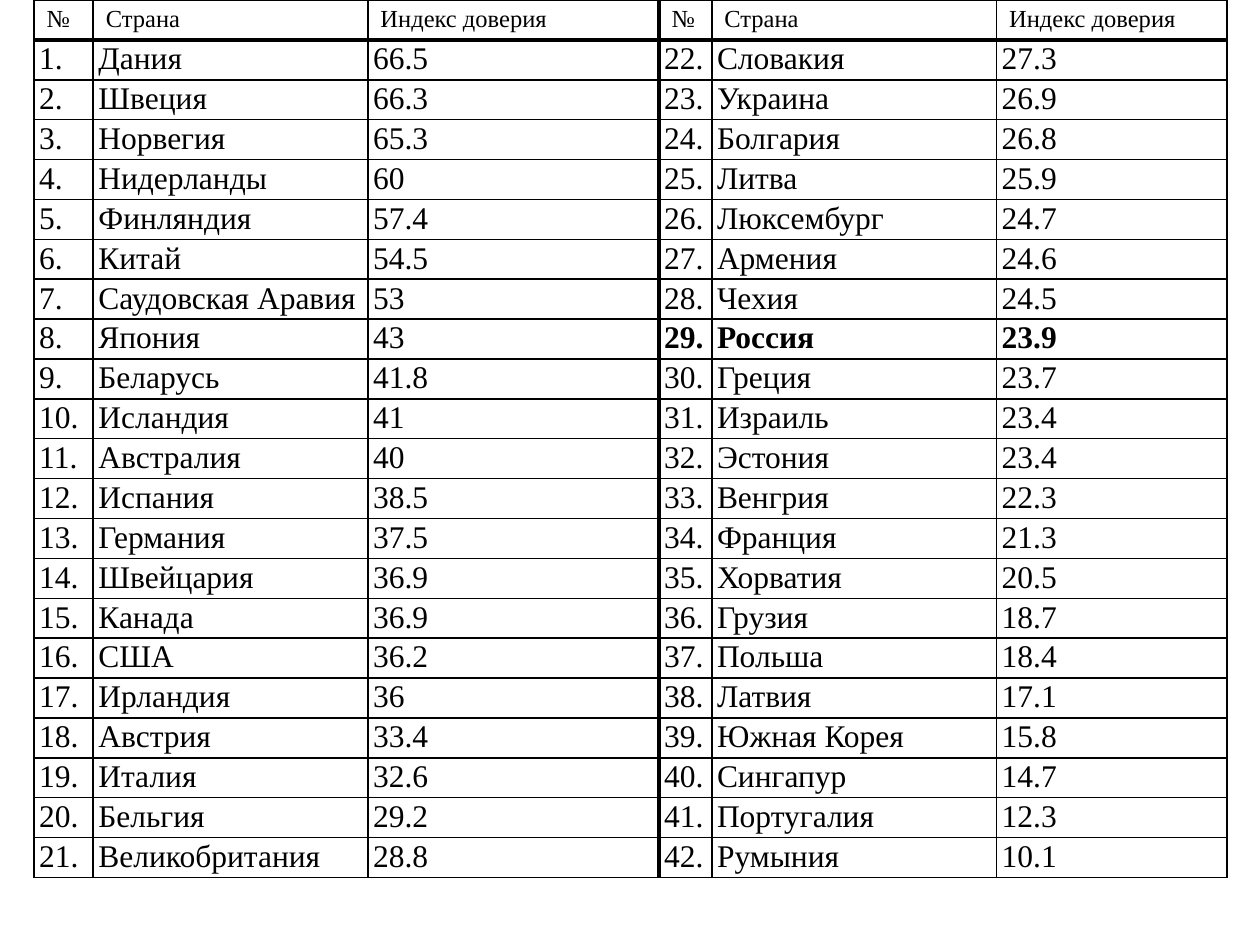
from typing import NamedTuple

from lxml.etree import SubElement
from pptx import Presentation
from pptx.dml.color import RGBColor
from pptx.oxml.ns import qn
from pptx.util import Pt

COLORS = {"ink": "000000"}
FONT = "Times New Roman"
HEADS = ("№", "Страна", "Индекс доверия")
WIDTHS = (33.84, 156.96, 166.32, 30.24, 162.72, 131.76)
ROW = 22.8
LEFT = 19.44
THIN, THICK = 1, 3
BOLD = "Россия"


class Entry(NamedTuple):
    land: str
    trust: str


class Style(NamedTuple):
    size: float
    side: float
    edge: float


HEAD = Style(14, 7.2, 3.2)
BODY = Style(18, 3, 1)

# Countries in order of rank
ENTRIES = [
    Entry("Дания", "66.5"),
    Entry("Швеция", "66.3"),
    Entry("Норвегия", "65.3"),
    Entry("Нидерланды", "60"),
    Entry("Финляндия", "57.4"),
    Entry("Китай", "54.5"),
    Entry("Саудовская Аравия", "53"),
    Entry("Япония", "43"),
    Entry("Беларусь", "41.8"),
    Entry("Исландия", "41"),
    Entry("Австралия", "40"),
    Entry("Испания", "38.5"),
    Entry("Германия", "37.5"),
    Entry("Швейцария", "36.9"),
    Entry("Канада", "36.9"),
    Entry("США", "36.2"),
    Entry("Ирландия", "36"),
    Entry("Австрия", "33.4"),
    Entry("Италия", "32.6"),
    Entry("Бельгия", "29.2"),
    Entry("Великобритания", "28.8"),
    Entry("Словакия", "27.3"),
    Entry("Украина", "26.9"),
    Entry("Болгария", "26.8"),
    Entry("Литва", "25.9"),
    Entry("Люксембург", "24.7"),
    Entry("Армения", "24.6"),
    Entry("Чехия", "24.5"),
    Entry("Россия", "23.9"),
    Entry("Греция", "23.7"),
    Entry("Израиль", "23.4"),
    Entry("Эстония", "23.4"),
    Entry("Венгрия", "22.3"),
    Entry("Франция", "21.3"),
    Entry("Хорватия", "20.5"),
    Entry("Грузия", "18.7"),
    Entry("Польша", "18.4"),
    Entry("Латвия", "17.1"),
    Entry("Южная Корея", "15.8"),
    Entry("Сингапур", "14.7"),
    Entry("Португалия", "12.3"),
    Entry("Румыния", "10.1"),
]
HALF = len(ENTRIES) // 2


def write(cell, text: str, style: Style, bold: bool) -> None:
    """Put styled text into a cell without fill."""
    cell.fill.background()
    cell.margin_left = cell.margin_right = Pt(style.side)
    cell.margin_top = cell.margin_bottom = Pt(style.edge)
    par = cell.text_frame.paragraphs[0]
    par.text = text
    font = par.font
    font.name, font.size, font.bold = FONT, Pt(style.size), bold
    font.color.rgb = RGBColor.from_string(COLORS["ink"])


def border(cell, row: int, col: int) -> None:
    """Rule the cell, thick below the head and between the halves."""
    mid = len(HEADS)
    thick = {"L": col == mid, "R": col == mid - 1, "T": row == 1, "B": row == 0}
    props = cell._tc.get_or_add_tcPr()
    for spot, (side, heavy) in enumerate(thick.items()):
        line = SubElement(props, qn(f"a:ln{side}"))
        line.set("w", str(Pt(THICK if heavy else THIN)))
        fill = SubElement(line, qn("a:solidFill"))
        SubElement(fill, qn("a:srgbClr")).set("val", COLORS["ink"])
        props.insert(spot, line)  # lines come before the fill


def fill_half(table, half: int) -> None:
    """Fill one half of the table: head, then ranked countries."""
    start = half * HALF
    rows = [HEADS] + [
        (f"{rank}.", *entry)
        for rank, entry in enumerate(ENTRIES[start:start + HALF], start + 1)
    ]
    for row, texts in enumerate(rows):
        for col, text in enumerate(texts, half * len(HEADS)):
            cell = table.cell(row, col)
            write(cell, text, BODY if row else HEAD, texts[1] == BOLD)
            border(cell, row, col)


def main() -> None:
    deck = Presentation()
    deck.slide_width, deck.slide_height = Pt(720), Pt(540)
    slide = deck.slides.add_slide(deck.slide_layouts[6])

    # Table grid
    count = HALF + 1
    frame = slide.shapes.add_table(
        count, len(WIDTHS), Pt(LEFT), Pt(0), Pt(sum(WIDTHS)), Pt(ROW * count))
    table = frame.table
    table.first_row = table.horz_banding = False
    for column, width in zip(table.columns, WIDTHS):
        column.width = Pt(width)
    for row in table.rows:
        row.height = Pt(ROW)

    # Two halves side by side
    for half in range(2):
        fill_half(table, half)
    deck.save("out.pptx")


if __name__ == "__main__":
    main()
